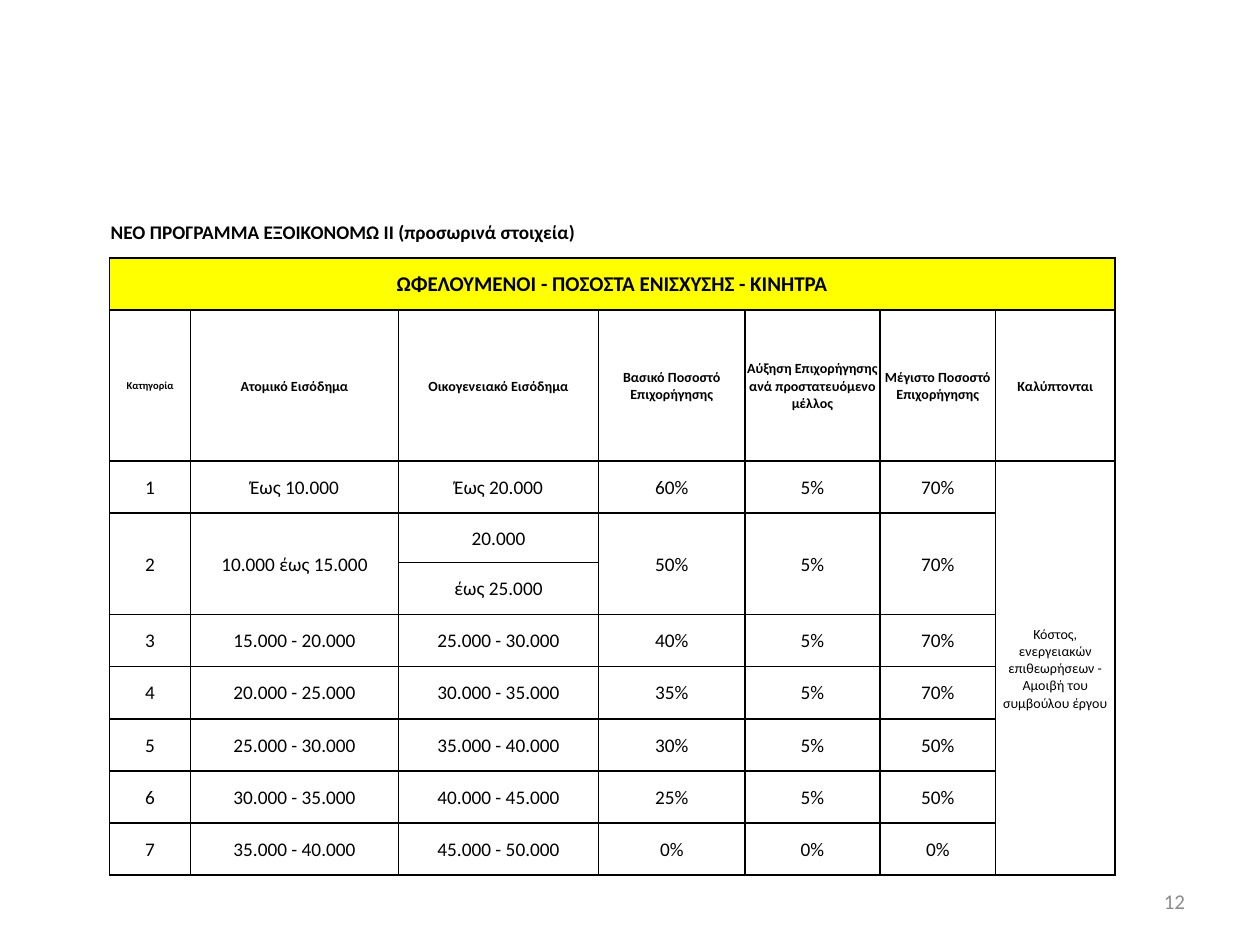
from dataclasses import dataclass

from lxml import etree
from pptx import Presentation
from pptx import util as u
from pptx.dml import color
from pptx.enum import text
from pptx.oxml import ns

FONT = "Calibri"
BLACK, GREY, YELLOW = "000000", "8C8C8C", "FFFF00"
MID, LEFT, RIGHT = text.PP_ALIGN.CENTER, text.PP_ALIGN.LEFT, text.PP_ALIGN.RIGHT
PLAIN = "{2D5ABB26-0587-4C30-8999-92F81FD0307C}"  # no style, no grid

COLS = [46.3, 118.9, 114.3, 83.7, 77.1, 66.2, 68.1]
STEP = 29.8
ROWS = [STEP] * 2 + [86.3, STEP, 28.1] + [STEP] * 6


@dataclass
class Cell:
    row: int
    col: int
    words: str
    size: float = 11
    bold: bool = False
    down: int = 1
    wide: int = 1
    align: int = MID
    fill: str = ""


HEADS = [
    "Κατηγορία", "Ατομικό Εισόδημα", "Οικογενειακό Εισόδημα",
    "Βασικό Ποσοστό Επιχορήγησης",
    "Αύξηση Επιχορήγησης ανά προστατευόμενο μέλλος",
    "Μέγιστο Ποσοστό Επιχορήγησης", "Καλύπτονται",
]
BANDS = [
    ("1", "Έως 10.000", "Έως 20.000", "60%", "5%", "70%"),
    ("2", "10.000 έως 15.000", "20.000", "50%", "5%", "70%"),
    ("3", "15.000 - 20.000", "25.000 - 30.000", "40%", "5%", "70%"),
    ("4", "20.000 - 25.000", "30.000 - 35.000", "35%", "5%", "70%"),
    ("5", "25.000 - 30.000", "35.000 - 40.000", "30%", "5%", "50%"),
    ("6", "30.000 - 35.000", "40.000 - 45.000", "25%", "5%", "50%"),
    ("7", "35.000 - 40.000", "45.000 - 50.000", "0%", "0%", "0%"),
]


def rgb(code: str) -> color.RGBColor:
    return color.RGBColor.from_string(code)


def apply(item, form: dict) -> None:
    for key, val in form.items():
        setattr(item, key, val)


def write(frame, words: str, size: float, bold: bool, align: int, ink: str) -> None:
    par = frame.paragraphs[0]
    par.alignment = align
    run = par.add_run()
    run.text = words
    apply(run.font, {"name": FONT, "size": u.Pt(size), "bold": bold})
    run.font.color.rgb = rgb(ink)


def edge(cell, sides: str) -> None:
    """Draw 1 pt black borders on the sides named."""
    props = cell._tc.get_or_add_tcPr()
    for side in sides:
        line = etree.SubElement(props, ns.qn("a:ln" + side), w=str(u.Pt(1)))
        fill = etree.SubElement(line, ns.qn("a:solidFill"))
        etree.SubElement(fill, ns.qn("a:srgbClr"), val=BLACK)


def sides(row: int, col: int) -> str:
    if row == 0:
        return "B"
    # The second family income is split over two open cells
    return {(4, 2): "LRT", (5, 2): "LRB"}.get((row, col), "LRTB")


def plan() -> list[Cell]:
    cells = [
        Cell(0, 0, "ΝΕΟ ΠΡΟΓΡΑΜΜΑ ΕΞΟΙΚΟΝΟΜΩ ΙΙ (προσωρινά στοιχεία)",
             bold=True, wide=6, align=LEFT),
        Cell(1, 0, "ΩΦΕΛΟΥΜΕΝΟΙ - ΠΟΣΟΣΤΑ ΕΝΙΣΧΥΣΗΣ - ΚΙΝΗΤΡΑ",
             12, True, wide=7, fill=YELLOW),
        Cell(3, 6, "Κόστος, ενεργειακών επιθεωρήσεων - Αμοιβή του συμβούλου έργου",
             8, down=8),
        Cell(5, 2, "έως 25.000"),
    ]
    cells += [Cell(2, c, head, 8 if c else 6, True) for c, head in enumerate(HEADS)]
    for i, band in enumerate(BANDS):
        row = 3 + i + (i > 1)
        cells += [Cell(row, c, words, down=2 if i == 1 and c != 2 else 1)
                  for c, words in enumerate(band)]
    return cells


def draw(table, spot: Cell) -> None:
    cell = table.cell(spot.row, spot.col)
    if spot.down > 1 or spot.wide > 1:
        cell.merge(table.cell(spot.row + spot.down - 1, spot.col + spot.wide - 1))
    write(cell.text_frame, spot.words, spot.size, spot.bold, spot.align, BLACK)
    if spot.fill:
        cell.fill.solid()
        cell.fill.fore_color.rgb = rgb(spot.fill)


def main() -> None:
    deck = Presentation()
    apply(deck, {"slide_width": u.Pt(720), "slide_height": u.Pt(540)})
    slide = deck.slides.add_slide(deck.slide_layouts[6])

    # Slide number
    box = slide.shapes.add_textbox(u.Pt(516.25), u.Pt(500.5), u.Pt(168), u.Pt(28.75))
    apply(box.text_frame, {"word_wrap": True,
                           "vertical_anchor": text.MSO_ANCHOR.MIDDLE})
    write(box.text_frame, "12", 12, False, RIGHT, GREY)

    # Table grid
    table = slide.shapes.add_table(
        len(ROWS), len(COLS), u.Pt(62.6), u.Pt(117.6),
        u.Pt(sum(COLS)), u.Pt(sum(ROWS))).table
    apply(table, {"first_row": False, "horz_banding": False})
    table._tbl.tblPr.find(ns.qn("a:tableStyleId")).text = PLAIN
    for col, wide in zip(table.columns, COLS):
        col.width = u.Pt(wide)
    for row, high in zip(table.rows, ROWS):
        row.height = u.Pt(high)

    # Cell format
    form = {"margin_left": u.Pt(0.7), "margin_right": u.Pt(0.7),
            "margin_top": u.Pt(0.7), "margin_bottom": u.Pt(0),
            "vertical_anchor": text.MSO_ANCHOR.MIDDLE}
    for r in range(len(ROWS)):
        for c in range(len(COLS)):
            cell = table.cell(r, c)
            apply(cell, form)
            edge(cell, sides(r, c))
            cell.fill.background()

    # Cell content
    for spot in plan():
        draw(table, spot)

    deck.save("out.pptx")


if __name__ == "__main__":
    main()
